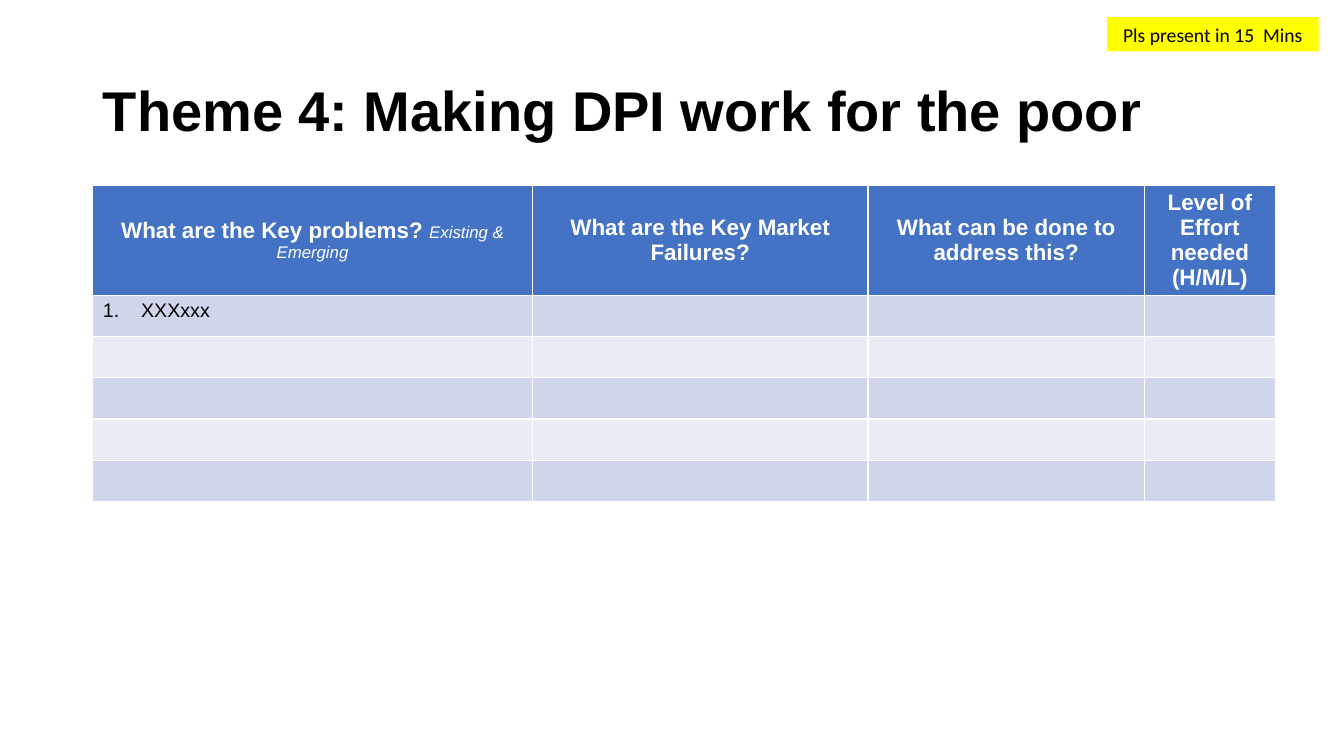
from lxml import etree
from pptx import Presentation, util as u
from pptx.dml.color import RGBColor
from pptx.enum import shapes, text

TITLE = "Theme 4: Making DPI work for the poor"
NOTE = "Pls present in 15  Mins"
# Each heading: column width in inches, then bold text and italic remark
HEADINGS = [
    (4.36, "What are the Key problems? ", "Existing & Emerging"),
    (3.33, "What are the Key Market Failures?", ""),
    (2.74, "What can be done to address this?", ""),
    (1.3, "Level of Effort needed (H/M/L)", ""),
]
FIRST_PROBLEM = "XXXxxx"
BODY_ROWS = 5
ROW_HEIGHT = 0.41
LEFT = 0.92
HEADER_FILL, BANDS = "4472C4", ("CFD5EA", "E9EBF5")
BLACK, WHITE, YELLOW = "000000", "FFFFFF", "FFFF00"


def paint(fill, color):
    fill.solid()
    fill.fore_color.rgb = RGBColor.from_string(color)


def style(r, size, color=BLACK, bold=False, italic=False, font="Arial"):
    f = r.font
    f.name, f.size, f.bold, f.italic = font, u.Pt(size), bold, italic
    f.color.rgb = RGBColor.from_string(color)


def number(p, indent):
    """Turn a paragraph into an automatically numbered item."""
    pPr = p._p.get_or_add_pPr()
    pPr.set("marL", str(u.Inches(indent)))
    pPr.set("indent", str(-u.Inches(indent)))
    ns = pPr.nsmap["a"]
    etree.SubElement(pPr, f"{{{ns}}}buFont", typeface="+mj-lt")
    etree.SubElement(pPr, f"{{{ns}}}buAutoNum", type="arabicPeriod")


def add_title(s):
    sp = s.shapes.title
    sp.left, sp.top, sp.width, sp.height = map(u.Inches, (LEFT, 0.4, 11.5, 1.45))
    tf = sp.text_frame
    tf.text = TITLE
    tf.auto_size = text.MSO_AUTO_SIZE.NONE
    tf.vertical_anchor = text.MSO_ANCHOR.MIDDLE
    p = tf.paragraphs[0]
    p.alignment = text.PP_ALIGN.LEFT
    p.line_spacing = 0.9
    style(p.runs[0], 40, bold=True)


def add_problem_table(s):
    rows = BODY_ROWS + 1
    width = sum(h[0] for h in HEADINGS)
    table = s.shapes.add_table(
        rows, len(HEADINGS), u.Inches(LEFT), u.Inches(1.84),
        u.Inches(width), u.Inches(rows * ROW_HEIGHT)).table
    for col, (col_width, heading, remark) in enumerate(HEADINGS):
        table.columns[col].width = u.Inches(col_width)
        cell = table.cell(0, col)
        paint(cell.fill, HEADER_FILL)
        cell.vertical_anchor = text.MSO_ANCHOR.MIDDLE
        p = cell.text_frame.paragraphs[0]
        p.text = heading
        p.alignment = text.PP_ALIGN.CENTER
        style(p.runs[0], 16, WHITE, bold=True)
        if remark:
            r = p.add_run()
            r.text = remark
            style(r, 12, WHITE, italic=True)
        for row in range(1, rows):
            paint(table.cell(row, col).fill, BANDS[(row - 1) % 2])
    p = table.cell(1, 0).text_frame.paragraphs[0]
    p.text = FIRST_PROBLEM
    style(p.runs[0], 14)
    number(p, 0.38)


def add_note(s):
    sp = s.shapes.add_shape(shapes.MSO_SHAPE.RECTANGLE,
                            *map(u.Inches, (10.98, 0.17, 2.1, 0.34)))
    sp.shadow.inherit = False
    paint(sp.fill, YELLOW)
    sp.line.fill.background()
    tf = sp.text_frame
    tf.text = NOTE
    tf.word_wrap = True
    tf.auto_size = text.MSO_AUTO_SIZE.SHAPE_TO_FIT_TEXT
    p = tf.paragraphs[0]
    p.alignment = text.PP_ALIGN.CENTER
    style(p.runs[0], 14, font="Calibri")


def main():
    prs = Presentation()
    prs.slide_width, prs.slide_height = u.Inches(13.33), u.Inches(7.5)
    s = prs.slides.add_slide(prs.slide_layouts.get_by_name("Title Only"))
    add_title(s)
    add_problem_table(s)
    add_note(s)
    prs.save("out.pptx")


if __name__ == "__main__":
    main()
